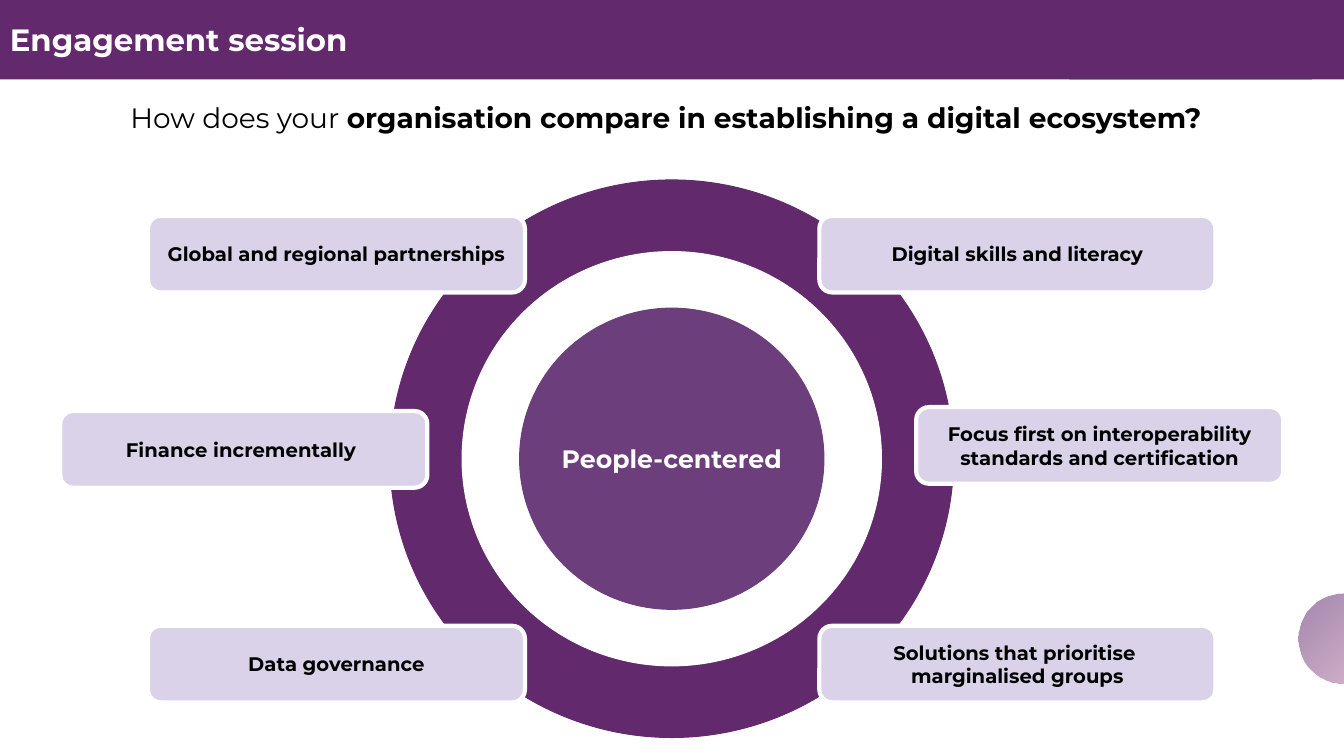
import pptx
import pptx.dml.color
import pptx.enum.shapes
import pptx.enum.text
import pptx.oxml
import pptx.oxml.ns
import pptx.util
from pptx.util import Cm

COLOURS = {
    "purple": "62296D",
    "core": "6C3E7B",
    "lavender": "D9D2E9",
    "white": "FFFFFF",
    "black": "000000",
    "pink": "D3A5C3",
    "plum": "5F2D6F",
}
FONT = "Montserrat"
SHAPES = pptx.enum.shapes.MSO_SHAPE
CENTRE = pptx.enum.text.PP_ALIGN.CENTER
LEFT = pptx.enum.text.PP_ALIGN.LEFT

RING_CENTRE = (16.93, 11.56)
RINGS = [  # width, height, colour
    (14.2, 14.05, "purple"),
    (10.57, 10.44, "white"),
    (7.67, 7.59, "core"),
]
LABEL_HEIGHT = 1.93
LABELS = [  # left, top, width, text
    (3.73, 5.44, 9.5, "Global and regional partnerships"),
    (1.52, 10.36, 9.25, "Finance incrementally "),
    (3.73, 15.77, 9.5, "Data governance"),
    (20.65, 5.44, 9.98, "Digital skills and literacy"),
    (23.09, 10.26, 9.25, "Focus first on interoperability\nstandards and certification"),
    (20.65, 15.77, 9.98, "Solutions that prioritise \nmarginalised groups"),
]


def rgb(name):
    return pptx.dml.color.RGBColor.from_string(COLOURS[name])


def add_shape(slide, kind, left, top, width, height, fill, line=None, line_width=0.75):
    shape = slide.shapes.add_shape(kind, Cm(left), Cm(top), Cm(width), Cm(height))
    shape.shadow.inherit = False
    shape.fill.solid()
    shape.fill.fore_color.rgb = rgb(fill)
    if line:
        shape.line.color.rgb = rgb(line)
        shape.line.width = pptx.util.Pt(line_width)
    else:
        shape.line.fill.background()
    return shape


def add_text_box(slide, left, top, width, height):
    return slide.shapes.add_textbox(Cm(left), Cm(top), Cm(width), Cm(height))


def format_text(shape, size, colour, alignment=CENTRE, bold=True, margin=0.25):
    """Style all text of a shape; margin is the top and bottom inset in cm."""
    frame = shape.text_frame
    frame.word_wrap = True
    frame.vertical_anchor = pptx.enum.text.MSO_ANCHOR.MIDDLE
    frame.margin_left = frame.margin_right = Cm(0.25)
    frame.margin_top = frame.margin_bottom = Cm(margin)
    for paragraph in frame.paragraphs:
        paragraph.alignment = alignment
        for run in paragraph.runs:
            run.font.name = FONT
            run.font.size = pptx.util.Pt(size)
            run.font.bold = bold
            run.font.color.rgb = rgb(colour)


def add_corner_circle(slide):
    """Translucent circle at the right edge, shaded from its lower right corner."""
    circle = add_shape(slide, SHAPES.OVAL, 32.72, 14.96, 2.26, 2.26, "pink")
    gradient = pptx.oxml.parse_xml(
        f'<a:gradFill {pptx.oxml.ns.nsdecls("a")} rotWithShape="1"><a:gsLst>'
        f'<a:gs pos="0"><a:srgbClr val="{COLOURS["pink"]}"><a:alpha val="71000"/></a:srgbClr></a:gs>'
        f'<a:gs pos="100000"><a:srgbClr val="{COLOURS["plum"]}"><a:alpha val="56000"/></a:srgbClr></a:gs>'
        '</a:gsLst><a:path path="circle"><a:fillToRect l="100000" t="100000"/></a:path></a:gradFill>'
    )
    properties = circle.element.spPr
    properties.replace(properties.find(pptx.oxml.ns.qn("a:solidFill")), gradient)


def add_title_bar(slide):
    add_shape(slide, SHAPES.RECTANGLE, 26.95, 0, 6.92, 2, "purple")
    title = add_shape(slide, SHAPES.RECTANGLE, 0, 0, 33.07, 2, "purple")
    title.text_frame.text = "Engagement session"
    format_text(title, 22, "white", LEFT, margin=0.13)


def add_question(slide):
    question = add_text_box(slide, 1.32, 2.24, 30.94, 1.42)
    paragraph = question.text_frame.paragraphs[0]
    paragraph.text = "How does your "
    emphasis = paragraph.add_run()
    emphasis.text = "organisation compare in establishing a digital ecosystem?"
    format_text(question, 20, "black", bold=False)
    emphasis.font.bold = True


def add_rings(slide):
    centre_x, centre_y = RING_CENTRE
    for width, height, colour in RINGS:
        add_shape(slide, SHAPES.OVAL, centre_x - width / 2, centre_y - height / 2,
                  width, height, colour, colour)
    core = add_text_box(slide, centre_x - 3.11, centre_y - 0.64, 6.22, 1.28)
    core.text_frame.text = "People-centered"
    format_text(core, 18, "white")


def add_label(slide, left, top, width, text):
    label = add_shape(slide, SHAPES.ROUNDED_RECTANGLE, left, top, width, LABEL_HEIGHT,
                      "lavender", "white", 3)
    label.text_frame.text = text
    format_text(label, 14, "black")


def main():
    presentation = pptx.Presentation()
    presentation.slide_width = Cm(33.87)
    presentation.slide_height = Cm(19.05)
    slide = presentation.slides.add_slide(presentation.slide_layouts[6])

    add_corner_circle(slide)
    add_rings(slide)
    for label in LABELS:
        add_label(slide, *label)
    add_title_bar(slide)
    add_question(slide)

    presentation.save("out.pptx")


if __name__ == "__main__":
    main()
